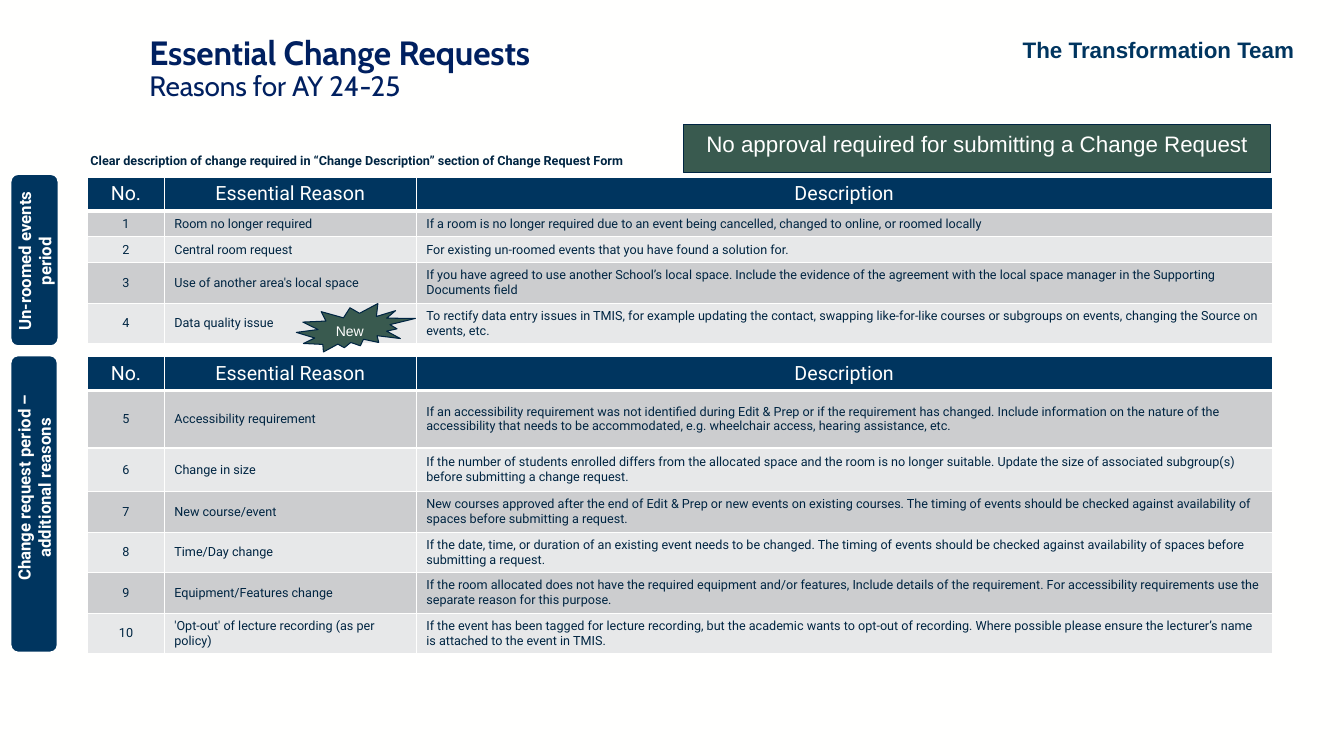
from pptx import Presentation
from pptx.dml.color import RGBColor
from pptx.enum.shapes import MSO_SHAPE
from pptx.enum.text import MSO_ANCHOR, MSO_AUTO_SIZE, PP_ALIGN
from pptx.oxml import parse_xml
from pptx.oxml.ns import nsdecls
from pptx.util import Cm, Pt

WHITE = RGBColor(0xFF, 0xFF, 0xFE)
NAVY = RGBColor(0x00, 0x35, 0x5F)
INK = RGBColor(0x00, 0x25, 0x42)
TITLE_BLUE = RGBColor(0x00, 0x20, 0x60)
GREEN = RGBColor(0x39, 0x5A, 0x4F)
DARK_BAND = RGBColor(0xCC, 0xCD, 0xCF)
LIGHT_BAND = RGBColor(0xE7, 0xE8, 0xE9)

HEAD = dict(name="Roboto", size=Pt(14), bold=False, rgb=WHITE)
BODY = dict(name="Roboto", size=Pt(9), bold=False, rgb=INK)
NOTE = dict(name="Roboto", size=Pt(9), bold=True, rgb=INK)
TAB = dict(name="Roboto", size=Pt(12), bold=True, rgb=WHITE)
TEAM = dict(name="Arial", size=Pt(16), bold=True, rgb=NAVY)
BANNER = dict(name="Arial", size=Pt(16), bold=False, rgb=WHITE)
BURST = dict(name="Arial", size=Pt(10), bold=False, rgb=WHITE)
TITLE = dict(name="Cabin", size=Pt(24), bold=True, rgb=TITLE_BLUE)
SUBTITLE = dict(name="Cabin", size=Pt(20), bold=False, rgb=TITLE_BLUE)

HEADINGS = ("No.", "Essential Reason", "Description")
LEFT = 2.21
COLS = (1.93, 6.35, 21.57)

UNROOMED = [
    ("1", "Room no longer required",
     "If a room is no longer required due to an event being cancelled, changed to online, or roomed locally"),
    ("2", "Central room request",
     "For existing un-roomed events that you have found a solution for."),
    ("3", "Use of another area's local space",
     "If you have agreed to use another School’s local space. Include the evidence of the agreement "
     "with the local space manager in the Supporting Documents field"),
    ("4", "Data quality issue",
     "To rectify data entry issues in TMIS, for example updating the contact, swapping like-for-like "
     "courses or subgroups on events, changing the Source on events, etc."),
]
ADDITIONAL = [
    ("5", "Accessibility requirement",
     "If an accessibility requirement was not identified during Edit & Prep or if the requirement has "
     "changed. Include information on the nature of the accessibility that needs to be accommodated, "
     "e.g. wheelchair access, hearing assistance, etc."),
    ("6", "Change in size",
     "If the number of students enrolled differs from the allocated space and the room is no longer "
     "suitable. Update the size of associated subgroup(s) before submitting a change request."),
]
FURTHER = [
    ("7", "New course/event",
     "New courses approved after the end of Edit & Prep or new events on existing courses. The timing "
     "of events should be checked against availability of spaces before submitting a request."),
    ("8", "Time/Day change",
     "If the date, time, or duration of an existing event needs to be changed. The timing of events "
     "should be checked against availability of spaces before submitting a request."),
    ("9", "Equipment/Features change",
     "If the room allocated does not have the required equipment and/or features, Include details of "
     "the requirement. For accessibility requirements use the separate reason for this purpose."),
    ("10", "'Opt-out' of lecture recording (as per policy)",
     "If the event has been tagged for lecture recording, but the academic wants to opt-out of "
     "recording. Where possible please ensure the lecturer’s name is attached to the event in TMIS."),
]


def write(p, text, fmt, align=PP_ALIGN.LEFT):
    p.alignment = align
    r = p.add_run()
    r.text = text
    for key, value in fmt.items():
        if key == "rgb":
            r.font.color.rgb = value
        else:
            setattr(r.font, key, value)
    return r


def add_label(s, box, text, fmt, align=PP_ALIGN.LEFT, anchor=MSO_ANCHOR.TOP):
    sp = s.shapes.add_textbox(*map(Cm, box))
    tf = sp.text_frame
    tf.word_wrap = True
    tf.vertical_anchor = anchor
    write(tf.paragraphs[0], text, fmt, align)
    return sp


def add_panel(s, kind, box, fill, line, width):
    sp = s.shapes.add_shape(kind, *map(Cm, box))
    sp.shadow.inherit = False
    sp.fill.solid()
    sp.fill.fore_color.rgb = fill
    sp.line.color.rgb = line
    sp.line.width = Pt(width)
    tf = sp.text_frame
    tf.word_wrap = True
    tf.vertical_anchor = MSO_ANCHOR.TOP
    return sp


def add_title(s, box):
    sp = s.shapes.title
    sp.left, sp.top, sp.width, sp.height = map(Cm, box)
    tf = sp.text_frame
    tf.word_wrap = True
    tf.auto_size = MSO_AUTO_SIZE.NONE
    tf.vertical_anchor = MSO_ANCHOR.TOP
    lines = (("Essential Change Requests", TITLE), ("Reasons for AY 24-25", SUBTITLE))
    for i, (text, fmt) in enumerate(lines):
        p = tf.add_paragraph() if i else tf.paragraphs[0]
        p.line_spacing = 0.9
        p.space_before = Pt(0)
        r = write(p, text, fmt)
        r.font._element.set("spc", "-10")


def style_cell(cell, fill, bottom):
    tc_pr = cell._tc.get_or_add_tcPr()
    for side, width in (("L", 1), ("R", 1), ("T", 1), ("B", bottom)):
        tc_pr.append(parse_xml(
            f'<a:ln{side} {nsdecls("a")} w="{Pt(width)}"><a:solidFill>'
            f'<a:srgbClr val="{WHITE}"/></a:solidFill></a:ln{side}>'))
    cell.fill.solid()
    cell.fill.fore_color.rgb = fill


def add_reasons(s, left, top, cols, heights, reasons, header=True):
    rows = [HEADINGS] * header + reasons
    frame = s.shapes.add_table(len(rows), len(cols), Cm(left), Cm(top),
                               Cm(sum(cols)), Cm(sum(heights)))
    table = frame.table
    table.first_row = header
    for col, width in zip(table.columns, cols):
        col.width = Cm(width)
    for i, (row, height) in enumerate(zip(rows, heights)):
        table.rows[i].height = Cm(height)
        is_head = header and i == 0
        band = LIGHT_BAND if (i - header) % 2 else DARK_BAND
        for j, text in enumerate(row):
            cell = table.cell(i, j)
            style_cell(cell, NAVY if is_head else band, 3 if is_head else 1)
            cell.vertical_anchor = MSO_ANCHOR.TOP if is_head else MSO_ANCHOR.MIDDLE
            align = PP_ALIGN.CENTER if is_head or j == 0 else PP_ALIGN.LEFT
            write(cell.text_frame.paragraphs[0], text, HEAD if is_head else BODY, align)


def add_side_tab(s, box, text, length, centre):
    left, top, width, height = box
    add_panel(s, MSO_SHAPE.ROUNDED_RECTANGLE, box, NAVY, WHITE, 2.25)
    label = (left + (width - length) / 2, top + centre - width / 2, length, width)
    sp = add_label(s, label, text, TAB, PP_ALIGN.CENTER, MSO_ANCHOR.MIDDLE)
    sp.rotation = 270


def add_callout(s, kind, box, text, fmt, align):
    sp = add_panel(s, kind, box, GREEN, INK, 0.75)
    write(sp.text_frame.paragraphs[0], text, fmt, align)


def main():
    prs = Presentation()
    prs.slide_width, prs.slide_height = Cm(33.87), Cm(19.05)
    s = prs.slides.add_slide(prs.slide_layouts[5])
    s.background.fill.solid()
    s.background.fill.fore_color.rgb = WHITE

    add_title(s, (3.51, 0.79, 20.5, 2.36))
    add_label(s, (25.27, 0.79, 7.85, 0.94), "The Transformation Team", TEAM, PP_ALIGN.CENTER)
    add_label(s, (2.03, 3.73, 21.59, 0.64),
              "Clear description of change required in “Change Description” section of "
              "Change Request Form", NOTE)
    add_reasons(s, LEFT, 4.47, COLS, (0.84, 0.65, 0.65, 1.02, 1.02), UNROOMED)
    add_reasons(s, LEFT, 8.99, COLS, (0.84, 1.45, 1.11), ADDITIONAL)
    add_reasons(s, LEFT, 12.39, COLS, (1.02,) * 4, FURTHER, header=False)
    add_side_tab(s, (0.25, 4.37, 1.24, 4.37), "Un-roomed events period", 4.37, 2.21)
    add_side_tab(s, (0.25, 8.94, 1.22, 7.52),
                 "Change request period – additional reasons", 6.73, 3.35)
    add_callout(s, MSO_SHAPE.RECTANGLE, (17.22, 3.15, 14.81, 1.2),
                "No approval required for submitting a Change Request", BANNER, PP_ALIGN.CENTER)
    add_callout(s, MSO_SHAPE.EXPLOSION2, (7.47, 7.65, 3, 1.22), "New", BURST, PP_ALIGN.LEFT)
    prs.save("out.pptx")


if __name__ == "__main__":
    main()
